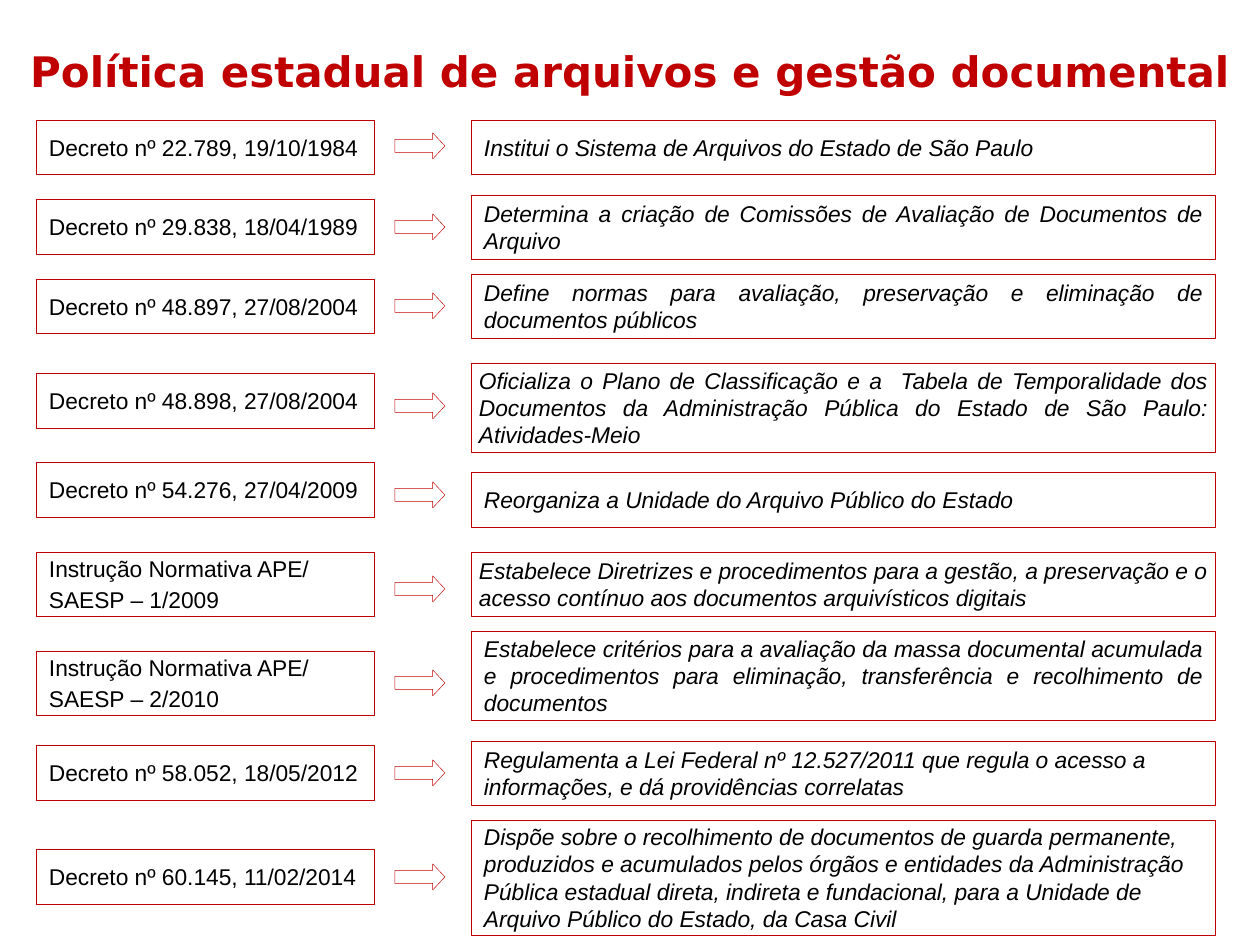
from pptx import Presentation
from pptx.dml.color import RGBColor
from pptx.enum.shapes import MSO_SHAPE
from pptx.enum.text import MSO_ANCHOR, PP_ALIGN
from pptx.util import Pt

PX = 914400 // 126
THEME = {
    "accent": RGBColor(0xC0, 0x00, 0x00),
    "title": {"name": "DejaVu Sans", "size": Pt(24), "bold": True},
    "body": {"name": "Arial", "size": Pt(13)},
    "text": RGBColor(0, 0, 0),
    "line": Pt(0.25),
    "space": Pt(2.6),
}
LEFT, JUSTIFY = PP_ALIGN.LEFT, PP_ALIGN.JUSTIFY
ACT_LEFT, ACT_WIDTH = 36, 338
ARROW_LEFT, ARROW_WIDTH, ARROW_HEIGHT = 395, 50, 26
SUMMARY_LEFT, SUMMARY_WIDTH = 471, 744
INSET, NARROW_INSET = 13, 8

# act lines, act alignment, act top and height, arrow top,
# summary, summary alignment, summary top and height, summary inset
ROWS = [
    (["Decreto nº 22.789, 19/10/1984"], JUSTIFY, 120, 54, 133,
     "Institui o Sistema de Arquivos do Estado de São Paulo",
     LEFT, 120, 54, INSET),
    (["Decreto nº 29.838, 18/04/1989"], JUSTIFY, 199, 55, 214,
     "Determina a criação de Comissões de Avaliação de Documentos de Arquivo",
     JUSTIFY, 195, 64, INSET),
    (["Decreto nº 48.897, 27/08/2004"], LEFT, 279, 54, 293,
     "Define normas para avaliação, preservação e eliminação de documentos públicos",
     JUSTIFY, 274, 64, INSET),
    (["Decreto nº 48.898, 27/08/2004"], LEFT, 373, 55, 393,
     "Oficializa o Plano de Classificação e a  Tabela de Temporalidade dos "
     "Documentos da Administração Pública do Estado de São Paulo: Atividades-Meio",
     JUSTIFY, 363, 89, NARROW_INSET),
    (["Decreto nº 54.276, 27/04/2009"], LEFT, 462, 55, 482,
     "Reorganiza a Unidade do Arquivo Público do Estado",
     LEFT, 472, 55, INSET),
    (["Instrução Normativa APE/", "SAESP – 1/2009"], LEFT, 552, 64, 576,
     "Estabelece Diretrizes e procedimentos para a gestão, a preservação e o "
     "acesso contínuo aos documentos arquivísticos digitais",
     LEFT, 552, 64, NARROW_INSET),
    (["Instrução Normativa APE/", "SAESP – 2/2010"], LEFT, 651, 64, 670,
     "Estabelece critérios para a avaliação da massa documental acumulada e "
     "procedimentos para eliminação, transferência e recolhimento de documentos",
     JUSTIFY, 631, 89, INSET),
    (["Decreto nº 58.052, 18/05/2012"], LEFT, 745, 55, 760,
     "Regulamenta a Lei Federal nº 12.527/2011 que regula o acesso a "
     "informações, e dá providências correlatas",
     LEFT, 741, 64, INSET),
    (["Decreto nº 60.145, 11/02/2014"], LEFT, 849, 55, 864,
     "Dispõe sobre o recolhimento de documentos de guarda permanente, produzidos "
     "e acumulados pelos órgãos e entidades da Administração Pública estadual "
     "direta, indireta e fundacional, para a Unidade de Arquivo Público do Estado, "
     "da Casa Civil",
     LEFT, 820, 115, INSET),
]

presentation = Presentation()
presentation.slide_width = 1260 * PX
presentation.slide_height = 945 * PX
slide = presentation.slides.add_slide(presentation.slide_layouts[5])


def add_outline(kind, left, top, width, height):
    shape = slide.shapes.add_shape(kind, left * PX, top * PX, width * PX, height * PX)
    shape.shadow.inherit = False
    shape.fill.background()
    shape.line.color.rgb = THEME["accent"]
    shape.line.width = THEME["line"]
    return shape


def write_lines(shape, lines, alignment, inset, wrap, italic):
    frame = shape.text_frame
    frame_format = {
        "word_wrap": wrap, "vertical_anchor": MSO_ANCHOR.MIDDLE,
        "margin_left": inset * PX, "margin_right": inset * PX,
    }
    for name, value in frame_format.items():
        setattr(frame, name, value)
    frame.text = "\n".join(lines)
    for paragraph in frame.paragraphs:
        paragraph.alignment = alignment
        paragraph.space_before = THEME["space"]
        font = paragraph.runs[0].font
        for name, value in {**THEME["body"], "italic": italic}.items():
            setattr(font, name, value)
        font.color.rgb = THEME["text"]


title = slide.shapes.title
title_place = {"left": 0, "top": 39 * PX, "width": 1260 * PX, "height": 63 * PX}
for name, value in title_place.items():
    setattr(title, name, value)
title.text_frame.text = "Política estadual de arquivos e gestão documental"
title.text_frame.word_wrap = True
title.text_frame.vertical_anchor = MSO_ANCHOR.TOP
title.text_frame.paragraphs[0].alignment = PP_ALIGN.CENTER
title_font = title.text_frame.paragraphs[0].runs[0].font
for name, value in THEME["title"].items():
    setattr(title_font, name, value)
title_font.color.rgb = THEME["accent"]

for (act_lines, act_alignment, act_top, act_height, arrow_top,
     summary_text, summary_alignment, summary_top, summary_height, inset) in ROWS:
    act = add_outline(MSO_SHAPE.RECTANGLE, ACT_LEFT, act_top, ACT_WIDTH, act_height)
    write_lines(act, act_lines, act_alignment, INSET, False, False)

    arrow = add_outline(MSO_SHAPE.RIGHT_ARROW, ARROW_LEFT, arrow_top, ARROW_WIDTH, ARROW_HEIGHT)
    arrow.adjustments[1] = 0.47

    summary = add_outline(MSO_SHAPE.RECTANGLE, SUMMARY_LEFT, summary_top,
                          SUMMARY_WIDTH, summary_height)
    write_lines(summary, [summary_text], summary_alignment, inset, True, True)

presentation.save("out.pptx")
